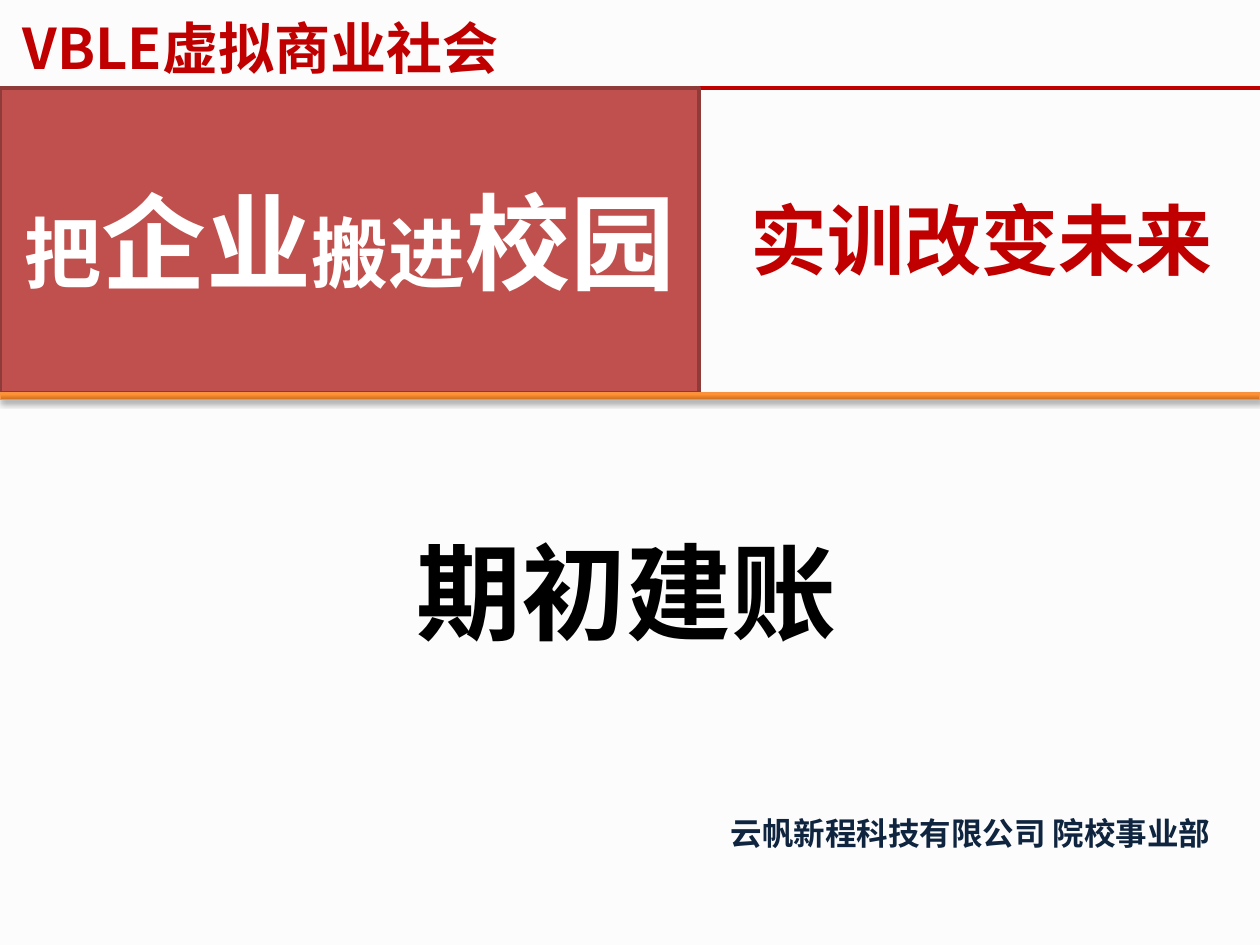
from copy import deepcopy

from lxml import etree
from pptx import Presentation
from pptx.dml.color import RGBColor
from pptx.enum.shapes import MSO_CONNECTOR, MSO_SHAPE
from pptx.enum.text import MSO_ANCHOR, MSO_AUTO_SIZE, PP_ALIGN
from pptx.oxml.ns import qn
from pptx.util import Inches, Pt

RECTANGLE = MSO_SHAPE.RECTANGLE
STRAIGHT = MSO_CONNECTOR.STRAIGHT
MIDDLE = MSO_ANCHOR.MIDDLE
GROW = MSO_AUTO_SIZE.SHAPE_TO_FIT_TEXT
CENTER = PP_ALIGN.CENTER

COLUMNS, ROWS = 100, 75
HEADER_ROW, BAND_ROW = 7, 31.2
CJK_FONT = "Noto Sans CJK SC"
RED, WHITE, BLACK, NAVY = "C00000", "FFFFFF", "000000", "0F243E"


def color(hex_code):
    return RGBColor.from_string(hex_code)


class CoverSlide:
    def __init__(self, deck, background):
        self.slide = deck.slides.add_slide(deck.slide_layouts[6])
        self.column = deck.slide_width / COLUMNS
        self.row = deck.slide_height / ROWS
        fill = self.slide.background.fill
        fill.solid()
        fill.fore_color.rgb = color(background)

    def place(self, left, top, width, height):
        return (round(left * self.column), round(top * self.row),
                round(width * self.column), round(height * self.row))

    def add_runs(self, paragraph, runs, ink, font_name):
        for words, size in runs:
            run = paragraph.add_run()
            run.text = words
            font = run.font
            font.name, font.size, font.bold = font_name, Pt(size), True
            font.color.rgb = color(ink)
            if font_name == CJK_FONT:
                east_asian = etree.SubElement(run._r.get_or_add_rPr(), qn("a:ea"))
                east_asian.set("typeface", font_name)

    def text(self, area, words, size, ink, font_name=CJK_FONT, wrap=False):
        frame = self.slide.shapes.add_textbox(*self.place(*area)).text_frame
        frame.word_wrap = wrap
        frame.auto_size = GROW
        self.add_runs(frame.paragraphs[0], [(words, size)], ink, font_name)

    def rule(self, row, ink, weight):
        left, top, width, _ = self.place(0, row, COLUMNS, 0)
        rule = self.slide.shapes.add_connector(STRAIGHT, left, top, left + width, top)
        rule.line.color.rgb = color(ink)
        rule.line.width = Pt(weight)
        etree.SubElement(rule._element.spPr, qn("a:effectLst"))

    def rectangle(self, area, edge, weight):
        rectangle = self.slide.shapes.add_shape(RECTANGLE, *self.place(*area))
        rectangle.shadow.inherit = False
        rectangle.line.color.rgb = color(edge)
        rectangle.line.width = Pt(weight)
        return rectangle

    def panel(self, area, fill, edge, weight, runs):
        panel = self.rectangle(area, edge, weight)
        panel.fill.solid()
        panel.fill.fore_color.rgb = color(fill)
        frame = panel.text_frame
        frame.word_wrap = True
        frame.vertical_anchor = MIDDLE
        frame.paragraphs[0].alignment = CENTER
        self.add_runs(frame.paragraphs[0], runs, WHITE, CJK_FONT)

    def band(self, area, edge, weight, stops):
        band = self.rectangle(area, edge, weight)
        band.fill.gradient()
        band.fill.gradient_angle = 90
        properties = band._element.spPr
        stop_list = properties.find(".//" + qn("a:gsLst"))
        stop_list.append(deepcopy(stop_list[-1]))
        for stop, (position, hex_code) in zip(band.fill.gradient_stops, stops):
            stop.position = position
            stop.color.rgb = color(hex_code)
        shadow = etree.SubElement(
            properties.find(qn("a:effectLst")), qn("a:outerShdw"),
            blurRad=str(Pt(3.1)), dist=str(Pt(1.8)), dir="5400000", rotWithShape="0")
        tint = etree.SubElement(shadow, qn("a:srgbClr"), val=BLACK)
        etree.SubElement(tint, qn("a:alpha"), val="35000")


def main():
    deck = Presentation()
    deck.slide_width, deck.slide_height = Inches(10), Inches(7.5)
    cover = CoverSlide(deck, "FCFCFC")
    cover.rule(HEADER_ROW, RED, 2.25)
    cover.text((0.8, 0.6, 44.5, 6.4), "VBLE虚拟商业社会", 32, RED, wrap=True)
    cover.text((32.1, 41.4, 35.7, 11.1), "期初建账", 60, BLACK)
    cover.text((57, 64.1, 40.5, 4), "云帆新程科技有限公司 院校事业部", 18, NAVY, "Calibri")
    cover.panel((0, HEADER_ROW, 55.5, BAND_ROW - HEADER_ROW), "C0504D", "8E3B39", 2,
                [("把", 44), ("企业", 60), ("搬进", 44), ("校园", 60)])
    cover.band((0, BAND_ROW, COLUMNS, 0.5), "F69240", 0.75,
               [(0, "CC6E20"), (0.8, "FF9034"), (1, "FF9136")])
    cover.text((58.6, 14.8, 39, 8.4), "实训改变未来", 44, RED)
    deck.save("out.pptx")


if __name__ == "__main__":
    main()
